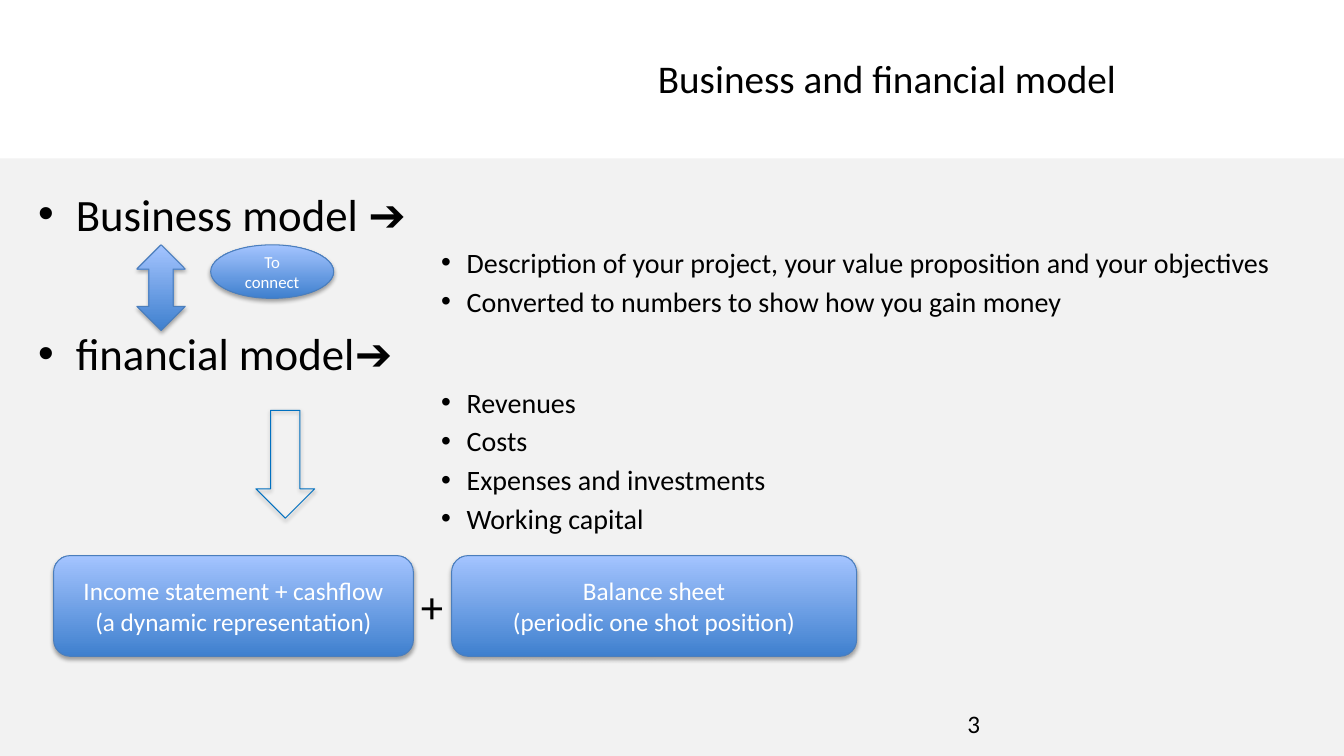
from dataclasses import dataclass

from lxml import etree
from pptx import Presentation
from pptx.dml.color import RGBColor
from pptx.enum.shapes import MSO_SHAPE
from pptx.enum.text import MSO_ANCHOR, PP_ALIGN
from pptx.oxml import parse_xml
from pptx.oxml.ns import nsdecls, qn
from pptx.util import Cm, Pt

RECTANGLE = MSO_SHAPE.RECTANGLE
ROUNDED = MSO_SHAPE.ROUNDED_RECTANGLE
OVAL = MSO_SHAPE.OVAL
UP_DOWN_ARROW = MSO_SHAPE.UP_DOWN_ARROW
DOWN_ARROW = MSO_SHAPE.DOWN_ARROW
MIDDLE = MSO_ANCHOR.MIDDLE
CENTER = PP_ALIGN.CENTER


@dataclass(frozen=True)
class Theme:
    font: str = "Calibri"
    text: RGBColor = RGBColor(0x00, 0x00, 0x00)
    light_text: RGBColor = RGBColor(0xFF, 0xFF, 0xFF)
    panel: RGBColor = RGBColor(0xF2, 0xF2, 0xF2)
    gradient_bottom: RGBColor = RGBColor(0x3F, 0x80, 0xCE)
    gradient_top: RGBColor = RGBColor(0xA4, 0xC4, 0xFF)
    border: RGBColor = RGBColor(0x4B, 0x7E, 0xBC)
    hollow_border: RGBColor = RGBColor(0x00, 0x70, 0xC0)
    heading: Pt = Pt(32)
    title: Pt = Pt(28)
    detail: Pt = Pt(20)
    label: Pt = Pt(18)
    small: Pt = Pt(12)


theme = Theme()
SHADOW = (
    f'<a:outerShdw {nsdecls("a")} blurRad="{Pt(3.1)}" dist="{Pt(1.8)}" dir="5400000" rotWithShape="0">'
    '<a:srgbClr val="000000"><a:alpha val="35000"/></a:srgbClr></a:outerShdw>'
)


def style_text(paragraph, size, color):
    for run in paragraph.runs:
        run.font.name = theme.font
        run.font.size = size
        run.font.color.rgb = color


def add_label(text, left, top, width, height, size, wrap=True):
    label = slide.shapes.add_textbox(Cm(left), Cm(top), Cm(width), Cm(height))
    label.text_frame.word_wrap = wrap
    label.text_frame.text = text
    for paragraph in label.text_frame.paragraphs:
        style_text(paragraph, size, theme.text)
    return label


presentation = Presentation()
presentation.slide_width = Cm(33.87)
presentation.slide_height = Cm(19.05)
slide = presentation.slides.add_slide(presentation.slide_layouts[6])

panel = slide.shapes.add_shape(RECTANGLE, Cm(0), Cm(3.99), Cm(33.87), Cm(15.06))
panel.shadow.inherit = False
panel.fill.solid()
panel.fill.fore_color.rgb = theme.panel
panel.line.fill.background()

outline = [
    ("Business model ➔", [
        "Description of your project, your value proposition and your objectives",
        "Converted to numbers to show how you gain money",
    ]),
    ("financial model➔", ["Revenues", "Costs", "Expenses and investments", "Working capital"]),
]
bullets = []
for heading, details in outline:
    bullets.append((heading, 0, 0.95, 0.95, theme.heading, Pt(6)))
    for detail in details:
        bullets.append((detail, 8, 10.8, 0.64, theme.detail, Pt(3.7)))

models = add_label("\n".join(bullet[0] for bullet in bullets), 0.71, 4.57, 32.84, 12.57, theme.heading)
for position, paragraph in enumerate(models.text_frame.paragraphs):
    _, level, margin, hanging, size, gap = bullets[position]
    paragraph.level = level
    properties = paragraph._p.get_or_add_pPr()
    properties.set("marL", str(Cm(margin)))
    properties.set("indent", str(-Cm(hanging)))
    etree.SubElement(properties, qn("a:buFont")).set("typeface", "Arial")
    etree.SubElement(properties, qn("a:buChar")).set("char", "•")
    paragraph.space_before = gap if position else Pt(0)
    style_text(paragraph, size, theme.text)

add_label("3", 24.13, 17.73, 7.9, 1.02, theme.label)
add_label("Business and financial model", 16.33, 1.24, 16.51, 1.45, theme.title)

diagram = [
    (UP_DOWN_ARROW, 3.45, 6.17, 1.22, 2.16, "", theme.small, True),
    (OVAL, 5.31, 6.17, 3.1, 1.35, "To connect", theme.small, True),
    (DOWN_ARROW, 6.45, 10.34, 1.48, 2.72, "", theme.small, False),
    (ROUNDED, 1.35, 14, 9.07, 2.54, "Income statement + cashflow\n(a dynamic representation)", theme.label, True),
    (ROUNDED, 11.38, 14, 10.21, 2.54, "Balance sheet\n(periodic one shot position)", theme.label, True),
]
for kind, left, top, width, height, text, size, filled in diagram:
    node = slide.shapes.add_shape(kind, Cm(left), Cm(top), Cm(width), Cm(height))
    node.shadow.inherit = False
    node._element.spPr.find(qn("a:effectLst")).append(parse_xml(SHADOW))
    node.line.width = Pt(0.75)
    node.line.color.rgb = theme.border if filled else theme.hollow_border
    if filled:
        node.fill.gradient()
        node.fill.gradient_angle = 90
        bottom, top_stop = node.fill.gradient_stops
        bottom.color.rgb, bottom.position = theme.gradient_bottom, 0
        top_stop.color.rgb, top_stop.position = theme.gradient_top, 1
    else:
        node.fill.background()
    if text:
        node.text_frame.word_wrap = True
        node.text_frame.vertical_anchor = MIDDLE
        node.text_frame.text = text
        for paragraph in node.text_frame.paragraphs:
            paragraph.alignment = CENTER
            style_text(paragraph, size, theme.light_text)

add_label("+", 10.36, 14.45, 1.09, 1.63, theme.heading, wrap=False)

presentation.save("out.pptx")
